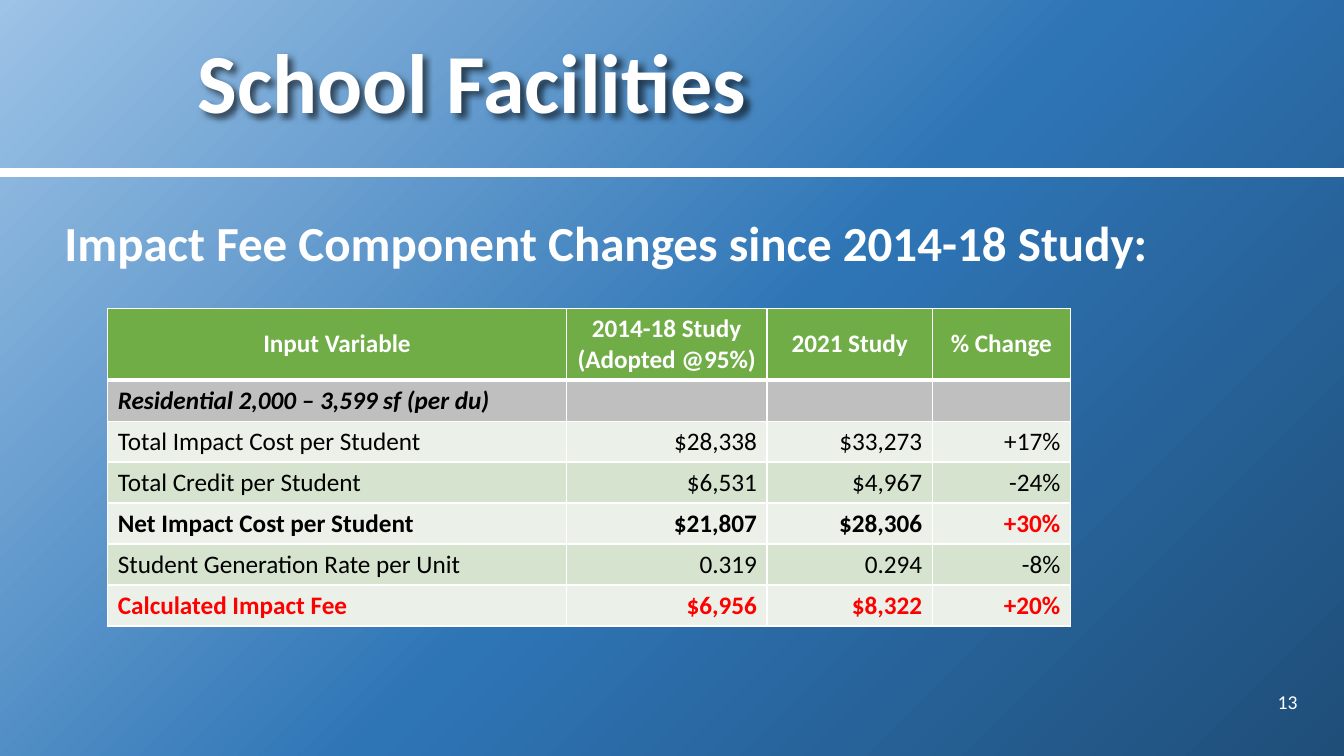
from dataclasses import dataclass

from lxml import etree
from pptx import Presentation
from pptx.dml.color import RGBColor
from pptx.enum.shapes import MSO_CONNECTOR
from pptx.enum.text import MSO_ANCHOR, PP_ALIGN
from pptx.oxml import parse_xml
from pptx.oxml.ns import nsdecls, qn
from pptx.util import Pt

LEFT, CENTER, RIGHT = PP_ALIGN.LEFT, PP_ALIGN.CENTER, PP_ALIGN.RIGHT
TOP, MIDDLE = MSO_ANCHOR.TOP, MSO_ANCHOR.MIDDLE
STRAIGHT = MSO_CONNECTOR.STRAIGHT


@dataclass(frozen=True)
class Theme:
    font: str = "Calibri"
    white: str = "FFFFFF"
    black: str = "000000"
    red: str = "FF0000"
    header: str = "70AD47"
    section: str = "BFBFBF"
    bands: tuple[str, str] = ("EBF1E9", "D5E3CF")
    backdrop: tuple[tuple[int, str], ...] = ((0, "9DC3E6"), (53, "2E75B6"), (100, "1F4E79"))
    title_size: float = 60
    heading_size: float = 35
    table_size: float = 18
    number_size: float = 14


THEME = Theme()
PAGE_WIDTH, PAGE_HEIGHT = 960, 540
RULE_TOP = 123.1
TABLE_LEFT, TABLE_TOP = 77, 220.3
COLUMN_WIDTHS = (327.6, 143.3, 118.1, 98.6)
HEADER_HEIGHT, ROW_HEIGHT = 51.2, 29.3


@dataclass(frozen=True)
class Label:
    text: str
    left: float
    top: float
    width: float
    height: float
    size: float
    bold: bool = True
    align: PP_ALIGN = LEFT
    anchor: MSO_ANCHOR = MIDDLE
    spacing: float = 1.0


@dataclass(frozen=True)
class FeeRow:
    values: tuple[str, ...]
    fill: str
    color: str = THEME.black
    change_color: str = THEME.black
    bold: bool = False
    italic: bool = False


TITLE = Label("School Facilities", 133.9, 0, 799.2, RULE_TOP, THEME.title_size, spacing=0.9)
LABELS = (
    Label("Impact Fee Component Changes since 2014-18 Study:", 38.9, 139.7, 894.2, 379.4,
          THEME.heading_size, anchor=TOP, spacing=1.2),
    Label("13", 869.8, 486.7, 64.1, 28.8, THEME.number_size, bold=False, align=RIGHT),
)
LIGHT, DARK = THEME.bands
FEE_ROWS = (
    FeeRow(("Input Variable", "2014-18 Study (Adopted @95%)", "2021 Study", "% Change"),
           THEME.header, THEME.white, THEME.white, bold=True),
    FeeRow(("Residential 2,000 – 3,599 sf (per du)", "", "", ""),
           THEME.section, bold=True, italic=True),
    FeeRow(("Total Impact Cost per Student", "$28,338", "$33,273", "+17%"), LIGHT),
    FeeRow(("Total Credit per Student", "$6,531", "$4,967", "-24%"), DARK),
    FeeRow(("Net Impact Cost per Student", "$21,807", "$28,306", "+30%"),
           LIGHT, change_color=THEME.red, bold=True),
    FeeRow(("Student Generation Rate per Unit", "0.319", "0.294", "-8%"), DARK),
    FeeRow(("Calculated Impact Fee", "$6,956", "$8,322", "+20%"),
           LIGHT, THEME.red, THEME.red, bold=True),
)


def style_font(font, size: float, color: str, bold: bool, italic: bool = False) -> None:
    font.name, font.size, font.bold, font.italic = THEME.font, Pt(size), bold, italic
    font.color.rgb = RGBColor.from_string(color)


def paint_backdrop(page) -> None:
    """Fill the page with a gradient spreading from its top left corner."""
    stops = "".join(f'<a:gs pos="{place * 1000}"><a:srgbClr val="{color}"/></a:gs>'
                    for place, color in THEME.backdrop)
    backdrop = parse_xml(
        f'<p:bg {nsdecls("p", "a")}><p:bgPr><a:gradFill rotWithShape="1">'
        f'<a:gsLst>{stops}</a:gsLst><a:path path="circle">'
        '<a:fillToRect r="100000" b="100000"/></a:path></a:gradFill>'
        '<a:effectLst/></p:bgPr></p:bg>')
    page.element.cSld.insert(0, backdrop)


def add_rule(page) -> None:
    rule = page.shapes.add_connector(STRAIGHT, 0, Pt(RULE_TOP), Pt(PAGE_WIDTH), Pt(RULE_TOP))
    rule.line.width = Pt(6)
    rule.line.color.rgb = RGBColor.from_string(THEME.white)
    etree.SubElement(rule.element.spPr, qn("a:effectLst"))


def add_label(page, label: Label):
    box = page.shapes.add_textbox(Pt(label.left), Pt(label.top), Pt(label.width), Pt(label.height))
    frame = box.text_frame
    frame.word_wrap = True
    frame.vertical_anchor = label.anchor
    para = frame.paragraphs[0]
    para.text, para.alignment, para.line_spacing = label.text, label.align, label.spacing
    style_font(para.font, label.size, THEME.white, label.bold)
    return box


def cast_shadow(box) -> None:
    box.element.spPr.append(parse_xml(
        f'<a:effectLst {nsdecls("a")}><a:outerShdw blurRad="50800" dist="50800" dir="2700000" '
        'algn="tl" rotWithShape="0"><a:srgbClr val="000000"><a:alpha val="60000"/></a:srgbClr>'
        '</a:outerShdw></a:effectLst>'))


def draw_borders(cell, top: float, bottom: float) -> None:
    """Put white borders before the cell's fill, as the schema orders them."""
    properties = cell._tc.get_or_add_tcPr()
    widths = (("lnL", 1), ("lnR", 1), ("lnT", top), ("lnB", bottom))
    for index, (side, width) in enumerate(widths):
        properties.insert(index, parse_xml(
            f'<a:{side} {nsdecls("a")} w="{Pt(width)}"><a:solidFill>'
            f'<a:srgbClr val="{THEME.white}"/></a:solidFill></a:{side}>'))


def fill_cell(cell, fee: FeeRow, row: int, column: int) -> None:
    cell.fill.solid()
    cell.fill.fore_color.rgb = RGBColor.from_string(fee.fill)
    cell.vertical_anchor = MIDDLE
    draw_borders(cell, top=3 if row == 1 else 1, bottom=3 if row == 0 else 1)
    para = cell.text_frame.paragraphs[0]
    para.text = fee.values[column]
    para.alignment = CENTER if row == 0 else RIGHT if column else LEFT
    is_change = column == len(COLUMN_WIDTHS) - 1
    color = fee.change_color if is_change else fee.color
    style_font(para.font, THEME.table_size, color, fee.bold, fee.italic)


def add_fee_table(page) -> None:
    heights = [HEADER_HEIGHT] + [ROW_HEIGHT] * (len(FEE_ROWS) - 1)
    table = page.shapes.add_table(
        len(FEE_ROWS), len(COLUMN_WIDTHS), Pt(TABLE_LEFT), Pt(TABLE_TOP),
        Pt(sum(COLUMN_WIDTHS)), Pt(sum(heights))).table
    for column, width in zip(table.columns, COLUMN_WIDTHS):
        column.width = Pt(width)
    for row, (fee, height) in enumerate(zip(FEE_ROWS, heights)):
        table.rows[row].height = Pt(height)
        for column in range(len(COLUMN_WIDTHS)):
            fill_cell(table.cell(row, column), fee, row, column)


def main() -> None:
    deck = Presentation()
    deck.slide_width, deck.slide_height = Pt(PAGE_WIDTH), Pt(PAGE_HEIGHT)
    page = deck.slides.add_slide(deck.slide_layouts[6])
    paint_backdrop(page)
    add_rule(page)
    for label in LABELS:
        add_label(page, label)
    add_fee_table(page)
    cast_shadow(add_label(page, TITLE))
    deck.save("out.pptx")


if __name__ == "__main__":
    main()
